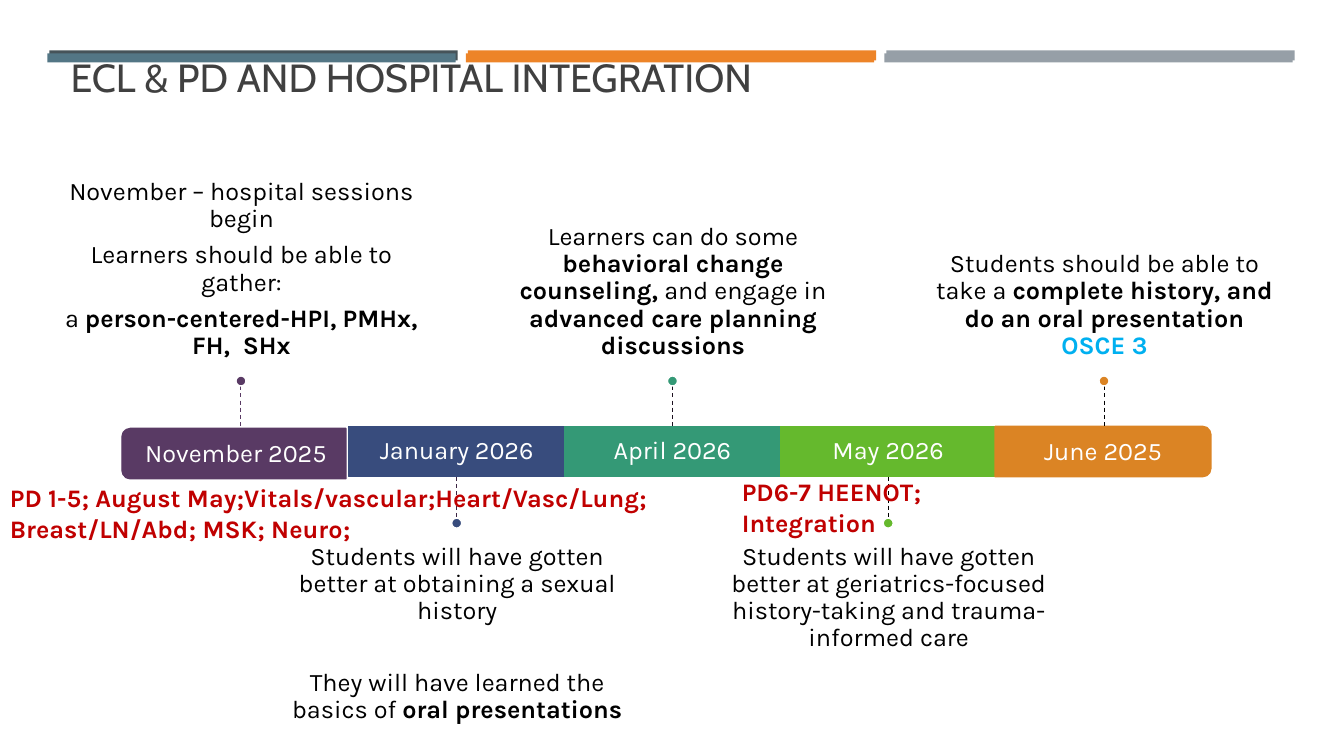
import pptx
import pptx.util
import pptx.dml.color
import pptx.enum.dml
import pptx.enum.shapes
import pptx.enum.text
import pptx.oxml.xmlchemy

PX = 9144
THEME = {
    "title_font": "Cabin", "body_font": "Karla",
    "title_size": 28, "body_size": 18,
    "title": "404040", "text": "000000", "white": "FFFFFF",
    "session": "C00000", "exam": "00B0F0",
    "bars": [("465359", "537685"), ("ED8428", "ED8428"), ("969FA7", "969FA7")],
}
SHAPE = pptx.enum.shapes.MSO_SHAPE
ANCHOR = pptx.enum.text.MSO_ANCHOR
ALIGN = pptx.enum.text.PP_ALIGN


def add_block(kind, left, top, width, height, fill, line=None):
    shape = slide.shapes.add_shape(kind, left * PX, top * PX, width * PX, height * PX)
    shape.shadow.inherit = False
    shape.fill.solid()
    shape.fill.fore_color.rgb = pptx.dml.color.RGBColor.from_string(fill)
    if line:
        shape.line.color.rgb = pptx.dml.color.RGBColor.from_string(line)
        shape.line.width = pptx.util.Pt(1)
    else:
        shape.line.fill.background()
    return shape


def write(shape, paragraphs, insets, anchor, align=ALIGN.CENTER, spacing=0.9,
          font="body_font", size="body_size"):
    frame = shape.text_frame
    frame.word_wrap = True
    frame.auto_size = pptx.enum.text.MSO_AUTO_SIZE.NONE
    frame.vertical_anchor = anchor
    frame.margin_left, frame.margin_top, frame.margin_right, frame.margin_bottom = [
        inset * PX for inset in insets]
    for index, (space_before, runs) in enumerate(paragraphs):
        paragraph = frame.add_paragraph() if index else frame.paragraphs[0]
        paragraph.alignment = align
        paragraph.line_spacing = spacing
        paragraph.space_before = pptx.util.Pt(space_before)
        for text, bold, color in runs:
            run = paragraph.add_run()
            run.text = text
            run.font.name = THEME[font]
            run.font.size = pptx.util.Pt(THEME[size])
            run.font.bold = bold
            run.font.color.rgb = pptx.dml.color.RGBColor.from_string(THEME[color])


presentation = pptx.Presentation()
presentation.slide_width = 1333 * PX
presentation.slide_height = 750 * PX
slide = presentation.slides.add_slide(presentation.slide_layouts[5])

for index, (back, front) in enumerate(THEME["bars"]):
    add_block(SHAPE.RECTANGLE, 49 + 415 * index, 50, 405, 10, back)
    add_block(SHAPE.RECTANGLE, 47 + 415 * index, 53, 405, 9, front)

title = slide.shapes.title
title.left, title.top, title.width, title.height = 60 * PX, 22 * PX, 1213 * PX, 114 * PX
write(title, [(0, [("ECL & PD AND HOSPITAL INTEGRATION", False, "title")])],
      (10, 5, 10, 5), ANCHOR.MIDDLE, ALIGN.LEFT, font="title_font", size="title_size")

milestones = [
    ("November 2025", "593A64", "593A64", [
        (0, [("November – hospital sessions begin", False, "text")]),
        (6.3, [("Learners should be able to gather:", False, "text")]),
        (6.3, [("a ", False, "text"),
               ("person-centered-HPI, PMHx, FH,  SHx", True, "text")])]),
    ("January 2026", "384C7D", "3B2442", [
        (0, [("Students will have gotten better at obtaining a sexual history", False, "text")]),
        (32, [("They will have learned the basics of ", False, "text"),
              ("oral presentations", True, "text")])]),
    ("April 2026", "349976", "1D1120", [
        (0, [("Learners can do some ", False, "text"),
             ("behavioral change counseling, ", True, "text"),
             ("and engage in ", False, "text"),
             ("advanced care planning discussions", True, "text")])]),
    ("May 2026", "65B92D", "000000", [
        (0, [("Students will have gotten better at geriatrics-focused history-taking "
              "and trauma-informed care", False, "text")])]),
    ("June 2025", "DB8424", "000000", [
        (0, [("Students should be able to take a ", False, "text"),
             ("complete history, and do an oral presentation", True, "text")]),
        (0, [("OSCE 3", True, "exam")])]),
]
STEP, BAND_TOP, BAND_HEIGHT = 214, 423, 50
rounded_ends = {0: (232, 450, 222, 270, 234), 4: (1094, 448, 214, 90, 1094)}

for index, (month, color, stem_color, goals) in enumerate(milestones):
    center = 239 + STEP * index
    above = index % 2 == 0
    if index in rounded_ends:
        middle_x, middle_y, length, rotation, label_x = rounded_ends[index]
        block = add_block(SHAPE.ROUND_2_SAME_RECTANGLE, middle_x - BAND_HEIGHT // 2,
                          middle_y - length // 2, BAND_HEIGHT, length, color, color)
        block.rotation = rotation
        label = slide.shapes.add_textbox((label_x - 106) * PX, (middle_y - 22) * PX,
                                         212 * PX, 45 * PX)
    else:
        block = add_block(SHAPE.RECTANGLE, center - STEP // 2, BAND_TOP,
                          STEP, BAND_HEIGHT, color, color)
        label = block
    write(label, [(0, [(month, False, "white")])], (15, 15, 15, 15), ANCHOR.MIDDLE)

    goal_box = slide.shapes.add_textbox((center - 178) * PX, (196 if above else 524) * PX,
                                        357 * PX, 176 * PX)
    write(goal_box, goals, (0, 0, 0, 15) if above else (0, 15, 0, 0),
          ANCHOR.BOTTOM if above else ANCHOR.TOP)

    stem_start, stem_end = (383, BAND_TOP) if above else (BAND_TOP + BAND_HEIGHT, 514)
    stem = slide.shapes.add_connector(pptx.enum.shapes.MSO_CONNECTOR.STRAIGHT,
                                      center * PX, stem_start * PX, center * PX, stem_end * PX)
    stem.line.color.rgb = pptx.dml.color.RGBColor.from_string(stem_color)
    stem.line.width = pptx.util.Pt(0.75)
    stem.line.dash_style = pptx.enum.dml.MSO_LINE.DASH
    stem.element.spPr.append(pptx.oxml.xmlchemy.OxmlElement("a:effectLst"))
    if not above:
        stem.begin_connect(block, 2)
    elif index not in rounded_ends:
        stem.end_connect(block, 0)
    add_block(SHAPE.OVAL, center - 5, 373 if above else 514, 10, 10, color, THEME["white"])

sessions = [
    (0, 474, 678, "PD 1-5; August May;Vitals/vascular;Heart/Vasc/Lung; Breast/LN/Abd; MSK; Neuro;"),
    (726, 468, 326, "PD6-7 HEENOT; Integration"),
]
for left, top, width, text in sessions:
    session_box = slide.shapes.add_textbox(left * PX, top * PX, width * PX, 71 * PX)
    write(session_box, [(0, [(text, True, "session")])], (10, 5, 10, 5),
          ANCHOR.TOP, ALIGN.LEFT, 1.0)

presentation.save("out.pptx")
